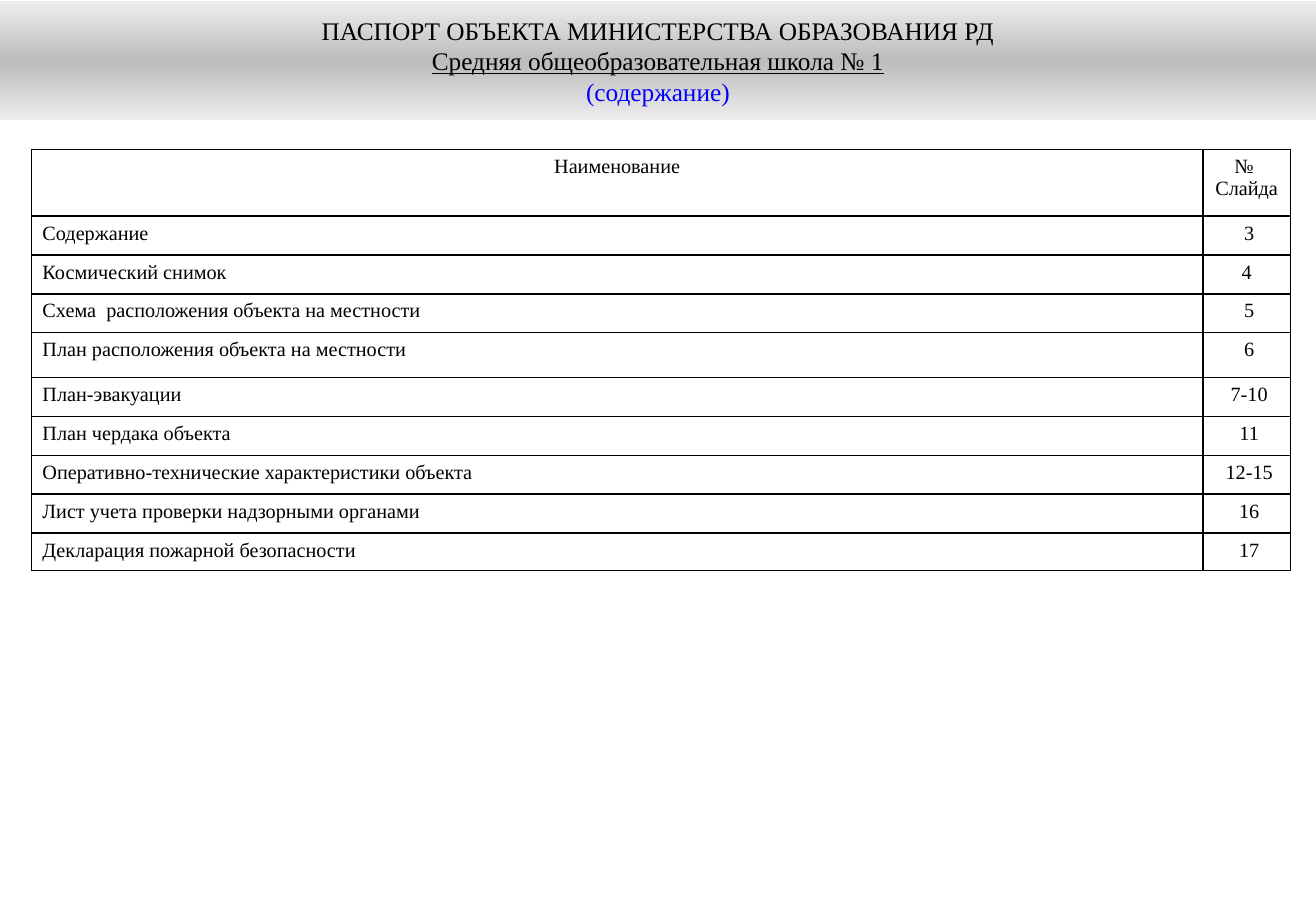
from copy import deepcopy
from dataclasses import dataclass

from pptx import Presentation
from pptx.dml.color import RGBColor
from pptx.enum.shapes import MSO_SHAPE
from pptx.enum.text import MSO_ANCHOR, PP_ALIGN
from pptx.oxml import parse_xml
from pptx.oxml.ns import nsdecls, qn
from pptx.slide import Slide
from pptx.table import _Cell as Cell
from pptx.text.text import TextFrame
from pptx.util import Inches, Pt

FONT = "Times New Roman"
BLACK = RGBColor(0x00, 0x00, 0x00)
BLUE = RGBColor(0x00, 0x00, 0xFF)
LIGHT_GREY = RGBColor(0xED, 0xED, 0xED)
GREY = RGBColor(0xBC, 0xBC, 0xBC)
BANNER_STOPS = [(0, LIGHT_GREY), (0.5, GREY), (1, LIGHT_GREY)]
COLUMN_WIDTHS = [9.64, 0.72]


@dataclass
class TitleLine:
    text: str
    color: RGBColor = BLACK
    underline: bool = False


@dataclass
class Entry:
    name: str
    number: str
    height: float = 0.32


TITLE = [
    TitleLine("ПАСПОРТ ОБЪЕКТА МИНИСТЕРСТВА ОБРАЗОВАНИЯ РД"),
    TitleLine("Средняя общеобразовательная школа № 1", underline=True),
    TitleLine("(содержание)", BLUE),
]
ENTRIES = [
    Entry("Наименование", "№ \nСлайда", 0.55),
    Entry("Содержание", " 3"),
    Entry("Космический снимок", "4"),
    Entry("Схема  расположения объекта на местности", " 5"),
    Entry("План расположения объекта на местности", " 6", 0.37),
    Entry("План-эвакуации", " 7-10"),
    Entry("План чердака объекта", " 11"),
    Entry("Оперативно-технические характеристики объекта", " 12-15"),
    Entry("Лист учета проверки надзорными органами", " 16"),
    Entry("Декларация пожарной безопасности", " 17", 0.31),
]


def format_text(tf: TextFrame, size: float, align: PP_ALIGN) -> None:
    for p in tf.paragraphs:
        p.alignment = align
        for r in p.runs:
            r.font.name = FONT
            r.font.size = Pt(size)
            r.font.bold = False
            r.font.color.rgb = BLACK


def add_banner(s: Slide) -> None:
    sp = s.shapes.add_shape(
        MSO_SHAPE.RECTANGLE, 0, Inches(0.01), Inches(10.83), Inches(0.98)
    )
    sp.shadow.inherit = False
    sp.line.fill.background()
    sp.fill.gradient()
    sp.fill.gradient_angle = 90
    stops = sp._element.spPr.find(".//" + qn("a:gsLst"))
    stops.insert(1, deepcopy(stops[0]))
    for stop, (position, color) in zip(sp.fill.gradient_stops, BANNER_STOPS):
        stop.position = position
        stop.color.rgb = color

    tf = sp.text_frame
    tf.word_wrap = True
    tf.vertical_anchor = MSO_ANCHOR.MIDDLE
    tf.text = "\n".join(line.text for line in TITLE)
    format_text(tf, 15, PP_ALIGN.CENTER)
    for p, line in zip(tf.paragraphs, TITLE):
        font = p.runs[0].font
        font.color.rgb = line.color
        font.underline = line.underline


def add_borders(cell: Cell) -> None:
    tcPr = cell._tc.get_or_add_tcPr()
    for i, side in enumerate("LRTB"):
        border = parse_xml(
            f'<a:ln{side} {nsdecls("a")} w="{Pt(1)}"><a:solidFill>'
            f'<a:srgbClr val="{BLACK}"/></a:solidFill></a:ln{side}>'
        )
        tcPr.insert(i, border)


def fill_cell(cell: Cell, text: str, align: PP_ALIGN) -> None:
    cell.text_frame.text = text
    cell.margin_left = cell.margin_right = Inches(0.09)
    cell.fill.background()
    add_borders(cell)
    format_text(cell.text_frame, 12, align)


def add_contents(s: Slide) -> None:
    table = s.shapes.add_table(
        len(ENTRIES), len(COLUMN_WIDTHS),
        Inches(0.26), Inches(1.23),
        Inches(sum(COLUMN_WIDTHS)), Inches(sum(e.height for e in ENTRIES)),
    ).table
    table.horz_banding = False
    for column, width in zip(table.columns, COLUMN_WIDTHS):
        column.width = Inches(width)
    for i, entry in enumerate(ENTRIES):
        table.rows[i].height = Inches(entry.height)
        name_align = PP_ALIGN.LEFT if i else PP_ALIGN.CENTER
        fill_cell(table.cell(i, 0), entry.name, name_align)
        fill_cell(table.cell(i, 1), entry.number, PP_ALIGN.CENTER)


def main() -> None:
    prs = Presentation()
    prs.slide_width = Inches(10.83)
    prs.slide_height = Inches(7.5)
    s = prs.slides.add_slide(prs.slide_layouts[6])
    add_banner(s)
    add_contents(s)
    prs.save("out.pptx")


if __name__ == "__main__":
    main()
